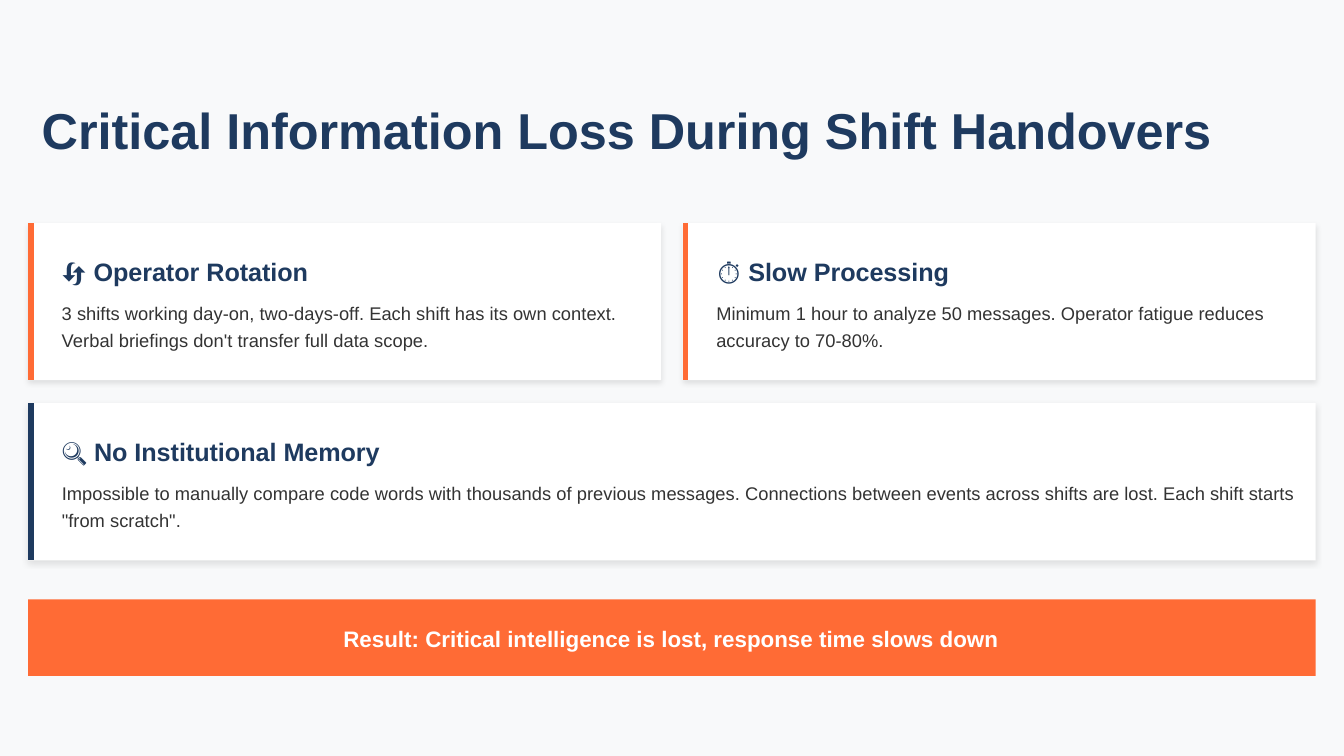
import pptx
import pptx.dml.color
import pptx.enum.shapes
import pptx.enum.text
import pptx.oxml
import pptx.oxml.ns
import pptx.util
from lxml import etree

Inches, Pt = pptx.util.Inches, pptx.util.Pt
ALIGN = pptx.enum.text.PP_ALIGN

# Content: column, row, columns spanned, accent colour, heading, body
TITLE = "Critical Information Loss During Shift Handovers"
CARDS = [
    (0, 0, 1, "orange", "🔄 Operator Rotation",
     "3 shifts working day-on, two-days-off. Each shift has its own context. "
     "Verbal briefings don't transfer full data scope."),
    (1, 0, 1, "orange", "⏱️ Slow Processing",
     "Minimum 1 hour to analyze 50 messages. Operator fatigue reduces "
     "accuracy to 70-80%."),
    (0, 1, 2, "navy", "🔍 No Institutional Memory",
     "Impossible to manually compare code words with thousands of previous "
     "messages. Connections between events across shifts are lost. Each shift "
     'starts "from scratch".'),
]
RESULT = "Result: Critical intelligence is lost, response time slows down"

COLORS = {"background": "F8F9FA", "navy": "1E3A5F", "orange": "FF6B35",
          "text": "333333", "white": "FFFFFF", "shadow": "000000"}

# Grid, in inches, on a 16:9 slide
SLIDE_WIDTH = 10
SLIDE_HEIGHT = SLIDE_WIDTH * 9 / 16
LEFT, TOP = 0.21, 1.66
CARD_WIDTH, CARD_HEIGHT = 4.71, 1.17
COLUMN_GAP, ROW_GAP = 0.16, 0.17
FULL_WIDTH = 2 * CARD_WIDTH + COLUMN_GAP
INDENT = 0.25
RIGHT_PADDING = {1: 0.13, 2: 0.02}
ACCENT_POINTS = 3


def color(name):
    return pptx.dml.color.RGBColor.from_string(COLORS[name])


def box(left, top, width, height):
    return [Inches(value) for value in (left, top, width, height)]


def write_text(shape, text, size, line, fill="navy", bold=True,
               align=ALIGN.LEFT, after=0):
    frame = shape.text_frame
    frame.word_wrap = True
    frame.auto_size = pptx.enum.text.MSO_AUTO_SIZE.NONE
    frame.vertical_anchor = pptx.enum.text.MSO_ANCHOR.TOP
    frame.margin_left = frame.margin_right = 0
    frame.margin_top = frame.margin_bottom = 0
    paragraph = frame.paragraphs[0]
    paragraph.alignment = align
    paragraph.line_spacing = Pt(line)
    paragraph.space_before, paragraph.space_after = Pt(0), Pt(after)
    run = paragraph.add_run()
    run.text = text
    run.font.name, run.font.size, run.font.bold = "Arial", Pt(size), bold
    run.font.color.rgb = color(fill)


def add_text(slide, area, text, **style):
    write_text(slide.shapes.add_textbox(*box(*area)), text, **style)


def add_panel(slide, area, fill):
    panel = slide.shapes.add_shape(
        pptx.enum.shapes.MSO_SHAPE.RECTANGLE, *box(*area))
    panel.fill.solid()
    panel.fill.fore_color.rgb = color(fill)
    panel.line.fill.background()
    panel.shadow.inherit = False
    return panel


def add_soft_shadow(shape):
    effects = shape.element.spPr.find(pptx.oxml.ns.qn("a:effectLst"))
    effects.append(pptx.oxml.parse_xml(
        f'<a:outerShdw {pptx.oxml.ns.nsdecls("a")} blurRad="{Pt(3)}" '
        f'dist="{Pt(1.5)}" dir="5400000" algn="bl" rotWithShape="0">'
        f'<a:srgbClr val="{COLORS["shadow"]}"><a:alpha val="10000"/>'
        '</a:srgbClr></a:outerShdw>'))


def add_accent(slide, left, top, height, fill):
    x = Inches(left) + Pt(ACCENT_POINTS / 2)
    accent = slide.shapes.add_connector(
        pptx.enum.shapes.MSO_CONNECTOR.STRAIGHT,
        x, Inches(top), x, Inches(top + height))
    accent.line.color.rgb = color(fill)
    accent.line.width = Pt(ACCENT_POINTS)
    etree.SubElement(accent.element.spPr, pptx.oxml.ns.qn("a:effectLst"))


def add_card(slide, column, row, span, accent, heading, body):
    left = LEFT + column * (CARD_WIDTH + COLUMN_GAP)
    top = TOP + row * (CARD_HEIGHT + ROW_GAP)
    width = span * CARD_WIDTH + (span - 1) * COLUMN_GAP
    text_left = left + INDENT
    text_width = width - INDENT - RIGHT_PADDING[span]
    add_soft_shadow(add_panel(slide, (left, top, width, CARD_HEIGHT), "white"))
    add_accent(slide, left, top, CARD_HEIGHT, accent)
    add_text(slide, (text_left, top + 0.21, text_width, 0.26), heading,
             size=13.5, line=18.9, after=6)
    add_text(slide, (text_left, top + 0.55, text_width, 0.41), body,
             size=9.8, line=14.6, fill="text", bold=False)


def main():
    presentation = pptx.Presentation()
    presentation.slide_width = Inches(SLIDE_WIDTH)
    presentation.slide_height = Inches(SLIDE_HEIGHT)
    slide = presentation.slides.add_slide(presentation.slide_layouts[5])
    slide.background.fill.solid()
    slide.background.fill.fore_color.rgb = color("background")

    # Title
    title = slide.shapes.title
    title.left, title.top, title.width, title.height = box(0.31, 0.81, 8.89, 0.37)
    write_text(title, TITLE, size=27, line=27)

    # Problem cards
    for card in CARDS:
        add_card(slide, *card)

    # Result banner
    add_panel(slide, (LEFT, 4.46, FULL_WIDTH, 0.57), "orange")
    add_text(slide, (LEFT + 0.07, 4.62, FULL_WIDTH - 0.15, 0.23), RESULT,
             size=12, line=16.8, fill="white", align=ALIGN.CENTER)

    presentation.save("out.pptx")


if __name__ == "__main__":
    main()
